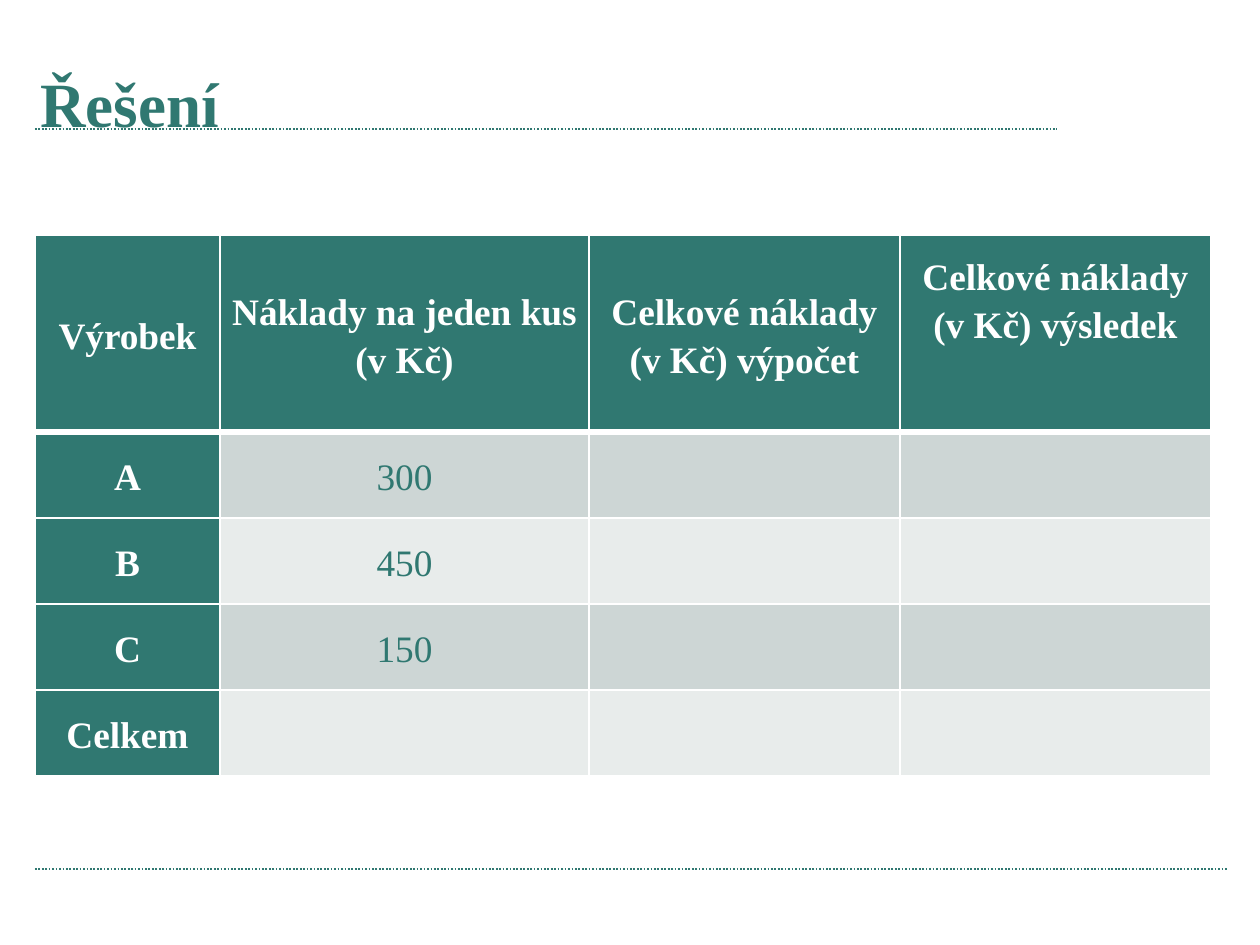
from dataclasses import dataclass

from lxml.etree import SubElement
from pptx import Presentation
from pptx.dml.color import RGBColor
from pptx.enum.dml import MSO_LINE
from pptx.enum.shapes import MSO_CONNECTOR
from pptx.enum.text import MSO_ANCHOR, PP_ALIGN
from pptx.oxml import parse_xml
from pptx.oxml.ns import nsdecls, qn
from pptx.util import Emu, Pt


@dataclass(frozen=True)
class Theme:
    font: str = "Times New Roman"
    teal: str = "307871"
    white: str = "FFFFFF"
    bands: tuple = ("CDD6D5", "E8ECEB")
    title: int = 27
    body: int = 16


THEME = Theme()

HEADS = ["Výrobek", "Náklady na jeden kus (v Kč)",
         "Celkové náklady (v Kč) výpočet", "Celkové náklady (v Kč) výsledek"]
COSTS = [("A", "300"), ("B", "450"), ("C", "150"), ("Celkem", "")]
WIDTHS = [185, 369, 311, 311]
HEAD_HIGH, ROW_HIGH = 197, 86


def px(count):
    return Emu(round(count * 914400 / 168))


def style(par, size, color, bold):
    for run in par.runs:
        run.font.name = THEME.font
        run.font.size = Pt(size)
        run.font.bold = bold
        run.font.color.rgb = RGBColor.from_string(color)


def add_title(slide, text):
    frame = slide.shapes.add_textbox(px(24), px(49), px(1110), px(99)).text_frame
    frame.word_wrap = True
    frame.vertical_anchor = MSO_ANCHOR.BOTTOM
    frame.text = text
    style(frame.paragraphs[0], THEME.title, THEME.teal, True)


def add_rule(slide, left, right, top):
    rule = slide.shapes.add_connector(
        MSO_CONNECTOR.STRAIGHT, px(left), px(top), px(right), px(top))
    rule.line.color.rgb = RGBColor.from_string(THEME.teal)
    rule.line.width = Pt(0.75)
    rule.line.dash_style = MSO_LINE.ROUND_DOT
    SubElement(rule._element.spPr, qn("a:effectLst"))


def set_edges(cell, top, bottom):
    """Draw white cell borders; top and bottom are widths in points."""
    props = cell._tc.get_or_add_tcPr()
    for spot, (side, width) in enumerate(
            [("L", 1), ("R", 1), ("T", top), ("B", bottom)]):
        props.insert(spot, parse_xml(
            f'<a:ln{side} {nsdecls("a")} w="{Pt(width)}"><a:solidFill>'
            f'<a:srgbClr val="{THEME.white}"/></a:solidFill></a:ln{side}>'))


def fill_cell(cell, text, fill, color, bold):
    cell.fill.solid()
    cell.fill.fore_color.rgb = RGBColor.from_string(fill)
    cell.vertical_anchor = MSO_ANCHOR.MIDDLE
    cell.margin_left = cell.margin_right = px(12)
    cell.margin_top = cell.margin_bottom = 0
    if text:
        cell.text_frame.text = text
        par = cell.text_frame.paragraphs[0]
        par.alignment = PP_ALIGN.CENTER
        par.line_spacing = 1.15
        par.space_after = Pt(10)
        style(par, THEME.body, color, bold)


def add_costs(slide):
    rows = [HEADS] + [[name, cost, "", ""] for name, cost in COSTS]
    high = HEAD_HIGH + ROW_HIGH * len(COSTS)
    table = slide.shapes.add_table(
        len(rows), len(HEADS), px(35), px(235), px(sum(WIDTHS)), px(high)).table
    table.first_row = table.horz_banding = False
    for col, width in zip(table.columns, WIDTHS):
        col.width = px(width)
    for r, row in enumerate(rows):
        table.rows[r].height = px(ROW_HIGH if r else HEAD_HIGH)
        for c, text in enumerate(row):
            cell = table.cell(r, c)
            head = r == 0 or c == 0
            fill = THEME.teal if head else THEME.bands[(r - 1) % 2]
            fill_cell(cell, text, fill, THEME.white if head else THEME.teal, head)
            set_edges(cell, 3 if r == 1 else 1, 3 if r == 0 else 1)
    # The last heading sits higher than its neighbours.
    table.cell(0, len(HEADS) - 1).margin_bottom = px(70)


def main():
    deck = Presentation()
    deck.slide_width, deck.slide_height = px(1260), px(945)
    slide = deck.slides.add_slide(deck.slide_layouts[6])
    add_rule(slide, 35, 1057, 129)
    add_rule(slide, 35, 1228, 869)
    add_title(slide, "Řešení")
    add_costs(slide)
    deck.save("out.pptx")


if __name__ == "__main__":
    main()
